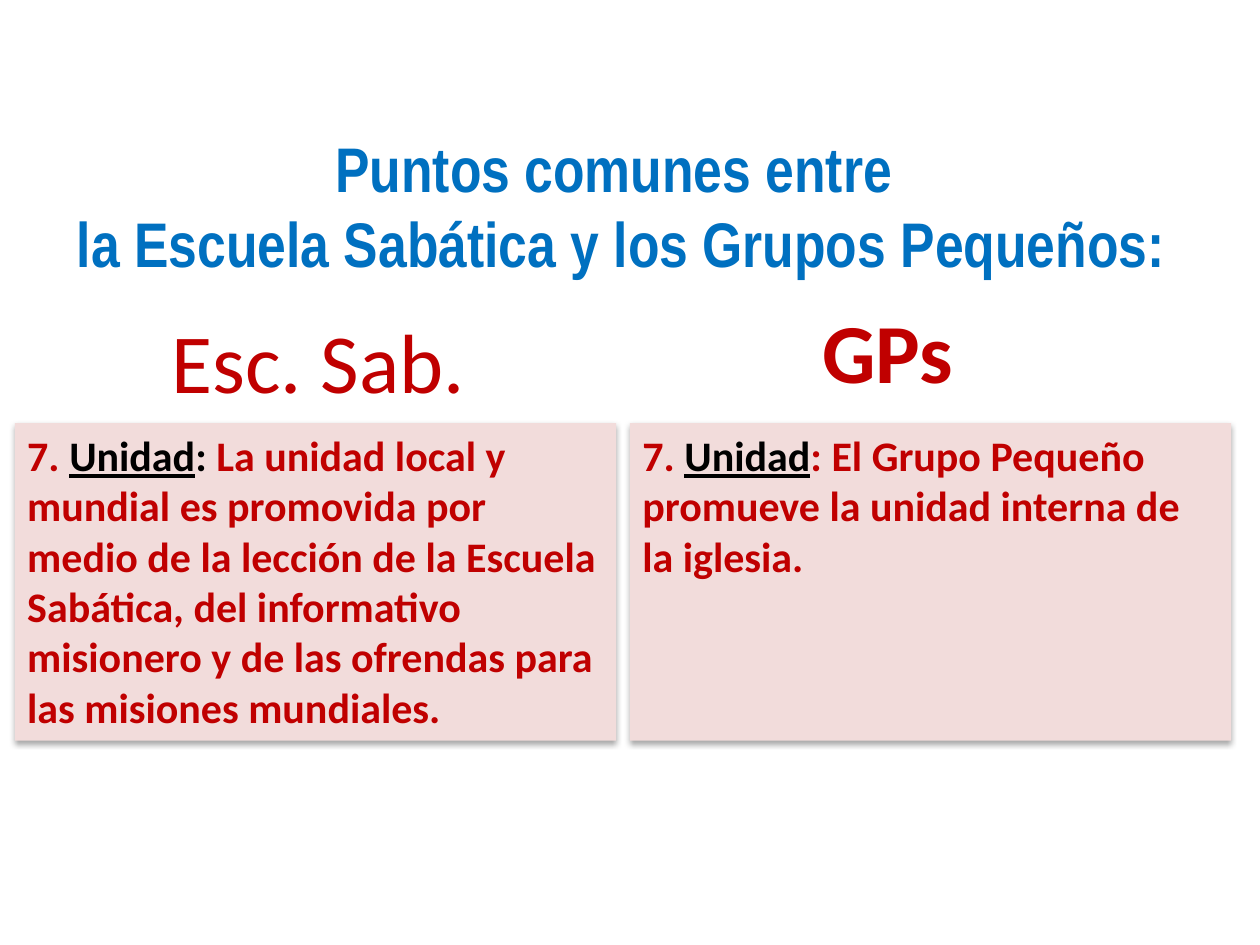
from dataclasses import dataclass

from lxml import etree
from pptx import Presentation
from pptx.dml.color import RGBColor
from pptx.enum import shapes, text
from pptx.oxml import parse_xml
from pptx.oxml.ns import nsdecls, qn
from pptx.util import Cm, Pt

COLORS = {"title": "0070C0", "red": "C00000", "outline": "D73A36",
          "panel": "F2DCDB", "black": "000000"}


@dataclass
class Heading:
    label: str
    left: float
    top: float
    width: float
    bold: bool


@dataclass
class Span:
    content: str
    color: str = "red"
    underline: bool = False


@dataclass
class Panel:
    left: float
    spans: list[Span]


def rgb(name: str) -> RGBColor:
    return RGBColor.from_string(COLORS[name])


def style(p, font: str, size: float, color: str, bold: bool) -> None:
    p.font.name, p.font.size, p.font.bold = font, Pt(size), bold
    p.font.color.rgb = rgb(color)


def add_title(slide, lines: list[str]) -> None:
    sp = slide.shapes.title
    sp.left, sp.top, sp.width, sp.height = Cm(1.09), Cm(1.52), Cm(22.86), Cm(5.21)
    tf = sp.text_frame
    tf.text = "\n".join(lines)
    tf.auto_size = text.MSO_AUTO_SIZE.NONE
    tf.vertical_anchor = text.MSO_ANCHOR.MIDDLE
    for p in tf.paragraphs:
        p.alignment = text.PP_ALIGN.CENTER
        style(p, "Arial Narrow", 36, "title", True)


def add_heading(slide, h: Heading) -> None:
    sp = slide.shapes.add_textbox(Cm(h.left), Cm(h.top), Cm(h.width), Cm(2.31))
    tf = sp.text_frame
    tf.word_wrap = False
    tf.auto_size = text.MSO_AUTO_SIZE.SHAPE_TO_FIT_TEXT
    p = tf.paragraphs[0]
    p.alignment = text.PP_ALIGN.CENTER
    style(p, "Calibri", 48, "red", h.bold)
    r = p.add_run()
    r.text = h.label
    # Outline around the letters
    r._r.get_or_add_rPr().insert(0, parse_xml(
        f'<a:ln {nsdecls("a")} w="{Pt(1.42)}"><a:solidFill>'
        f'<a:srgbClr val="{COLORS["outline"]}"/></a:solidFill></a:ln>'))


def add_shadow(sp) -> None:
    sp.shadow.inherit = False
    effects = sp._element.spPr.find(qn("a:effectLst"))
    shadow = etree.SubElement(effects, qn("a:outerShdw"), blurRad=str(Pt(3.1)),
                              dist=str(Pt(1.8)), dir="5400000", rotWithShape="0")
    color = etree.SubElement(shadow, qn("a:srgbClr"), val=COLORS["black"])
    etree.SubElement(color, qn("a:alpha"), val="35000")


def add_panel(slide, panel: Panel) -> None:
    sp = slide.shapes.add_shape(shapes.MSO_SHAPE.RECTANGLE, Cm(panel.left),
                                Cm(8.53), Cm(12.12), Cm(6.4))
    sp.fill.solid()
    sp.fill.fore_color.rgb = rgb("panel")
    sp.line.fill.background()
    add_shadow(sp)
    tf = sp.text_frame
    tf.word_wrap = True
    tf.vertical_anchor = text.MSO_ANCHOR.TOP
    p = tf.paragraphs[0]
    p.alignment = text.PP_ALIGN.LEFT
    style(p, "Calibri", 24, "red", True)
    for span in panel.spans:
        r = p.add_run()
        r.text = span.content
        r.font.color.rgb = rgb(span.color)
        if span.underline:
            r.font.underline = True


def main() -> None:
    prs = Presentation()
    prs.slide_width, prs.slide_height = Cm(25.4), Cm(19.05)
    slide = prs.slides.add_slide(prs.slide_layouts[5])

    add_title(slide, ["Puntos comunes entre ",
                      "la Escuela Sabática y los Grupos Pequeños:"])

    # Column headings
    for heading in (Heading("Esc. Sab.", 3.1, 6.12, 6.63, False),
                    Heading("GPs", 16.31, 5.92, 3.18, True)):
        add_heading(slide, heading)

    # Comparison panels
    number, topic = Span("7. "), Span("Unidad", "black", True)
    for panel in (
        Panel(0.3, [number, topic, Span(":", "black"),
                    Span(" La unidad local y mundial es promovida por medio de la "
                         "lección de la Escuela Sabática, del informativo misionero "
                         "y de las ofrendas para las misiones mundiales.")]),
        Panel(12.7, [number, topic,
                     Span(": El Grupo Pequeño promueve la unidad interna de la "
                          "iglesia.")]),
    ):
        add_panel(slide, panel)

    prs.save("out.pptx")


if __name__ == "__main__":
    main()
